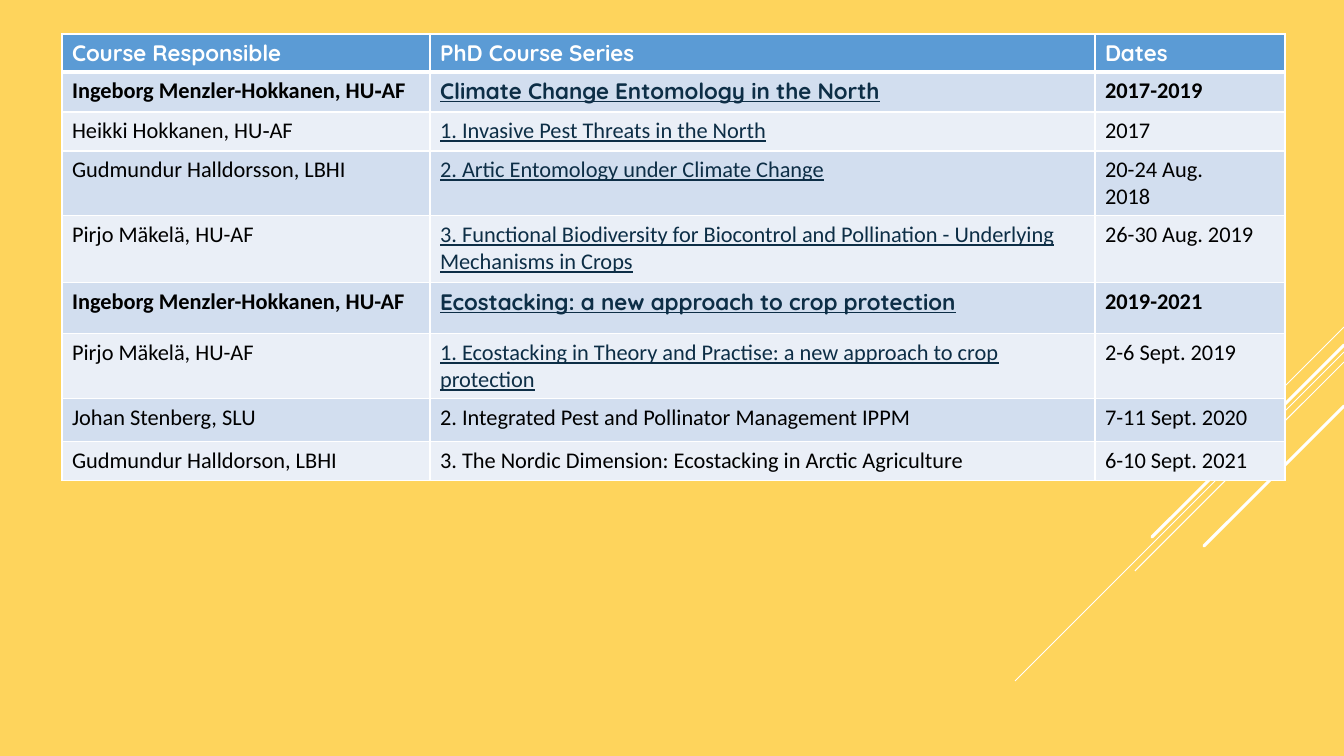
"""Build a slide with a table of PhD course series."""
from dataclasses import dataclass

from lxml.etree import SubElement as Sub
from pptx import Presentation as Deck
from pptx.dml.color import RGBColor as Color
from pptx.enum.shapes import MSO_CONNECTOR as Link
from pptx.oxml.ns import qn
from pptx.util import Pt

PX = 9071


@dataclass(frozen=True)
class Theme:
    page: str = "FED45C"
    head: str = "5B9BD5"
    bands: tuple = ("D2DEEF", "EAEFF7")
    white: str = "FFFFFF"
    ink: str = "000000"
    link: str = "0D2E46"
    title: str = "Quicksand"
    body: str = "Calibri"
    size: int = 16
    thin: float = 0.75
    thick: float = 2.25
    edge: int = 1
    rule: int = 3


LOOK = Theme()
WIDE, HIGH = 1344, 756
LEFT, TOP = 62, 34
COLS = (368, 665, 190)
ROWS = (38, 40, 39, 64, 67, 51, 64, 43, 39)
RAYS = (
    (327, 101, LOOK.thin),
    (352, 329, LOOK.thin),
    (362, 209, LOOK.thin),
    (345, 192, LOOK.thick),
    (406, 140, LOOK.thick),
)
HEAD = ("Course Responsible", "PhD Course Series", "Dates")
DATA = (
    ("Ingeborg Menzler-Hokkanen, HU‐AF",
     "Climate Change Entomology in the North", "2017-2019"),
    ("Heikki Hokkanen, HU‐AF",
     "1. Invasive Pest Threats in the North", "2017"),
    ("Gudmundur Halldorsson, LBHI",
     "2. Artic Entomology under Climate Change", "20-24 Aug.\n2018"),
    ("Pirjo Mäkelä, HU-AF",
     "3. Functional Biodiversity for Biocontrol and Pollination - "
     "Underlying Mechanisms in Crops", "26-30 Aug. 2019"),
    ("Ingeborg Menzler-Hokkanen, HU-AF",
     "Ecostacking: a new approach to crop protection", "2019-2021"),
    ("Pirjo Mäkelä, HU-AF",
     "1. Ecostacking in Theory and Practise: a new approach to crop "
     "protection", "2-6 Sept. 2019"),
    ("Johan Stenberg, SLU",
     "2. Integrated Pest and Pollinator Management IPPM",
     "7-11 Sept. 2020"),
    ("Gudmundur Halldorson, LBHI",
     "3. The Nordic Dimension: Ecostacking in Arctic Agriculture",
     "6-10 Sept. 2021"),
)
SERIES = (1, 5)
LINKED = range(1, 7)


def rgb(code):
    return Color.from_string(code)


def add_ray(slide, top, span, width):
    ray = slide.shapes.add_connector(
        Link.STRAIGHT, WIDE * PX, top * PX,
        (WIDE - span) * PX, (top + span) * PX)
    ray.line.color.rgb = rgb(LOOK.white)
    ray.line.width = Pt(width)
    if width == LOOK.thick:
        ray.get_or_add_ln().set("cap", "rnd")
    Sub(ray._element.spPr, qn("a:effectLst"))


def add_edges(cell, row):
    props = cell._tc.get_or_add_tcPr()
    rules = {"T": row == 1, "B": row == 0}
    for side in "LRTB":
        width = LOOK.rule if rules.get(side) else LOOK.edge
        line = Sub(props, qn(f"a:ln{side}"), w=str(Pt(width)))
        fill = Sub(line, qn("a:solidFill"))
        Sub(fill, qn("a:srgbClr"), val=LOOK.white)


def fill_cell(cell, text, row, col):
    add_edges(cell, row)
    head = row == 0
    link = col == 1 and row in LINKED
    series = row in SERIES
    cell.fill.solid()
    cell.fill.fore_color.rgb = rgb(
        LOOK.head if head else LOOK.bands[(row - 1) % 2])
    cell.text_frame.text = text
    for para in cell.text_frame.paragraphs:
        font = para.font
        font.name = LOOK.title if head or series and link else LOOK.body
        font.size = Pt(LOOK.size)
        font.bold = head or series
        font.underline = link
        font.color.rgb = rgb(
            LOOK.white if head else LOOK.link if link else LOOK.ink)


def add_grid(slide):
    grid = slide.shapes.add_table(
        len(ROWS), len(COLS), LEFT * PX, TOP * PX,
        sum(COLS) * PX, sum(ROWS) * PX).table
    grid.horz_banding = False
    for col, width in zip(grid.columns, COLS):
        col.width = width * PX
    for row, height in zip(grid.rows, ROWS):
        row.height = height * PX
    for row, texts in enumerate((HEAD, *DATA)):
        for col, text in enumerate(texts):
            fill_cell(grid.cell(row, col), text, row, col)


def main():
    deck = Deck()
    deck.slide_width, deck.slide_height = WIDE * PX, HIGH * PX
    slide = deck.slides.add_slide(deck.slide_layouts[6])
    slide.background.fill.solid()
    slide.background.fill.fore_color.rgb = rgb(LOOK.page)
    for ray in RAYS:
        add_ray(slide, *ray)
    add_grid(slide)
    deck.save("out.pptx")


if __name__ == "__main__":
    main()
